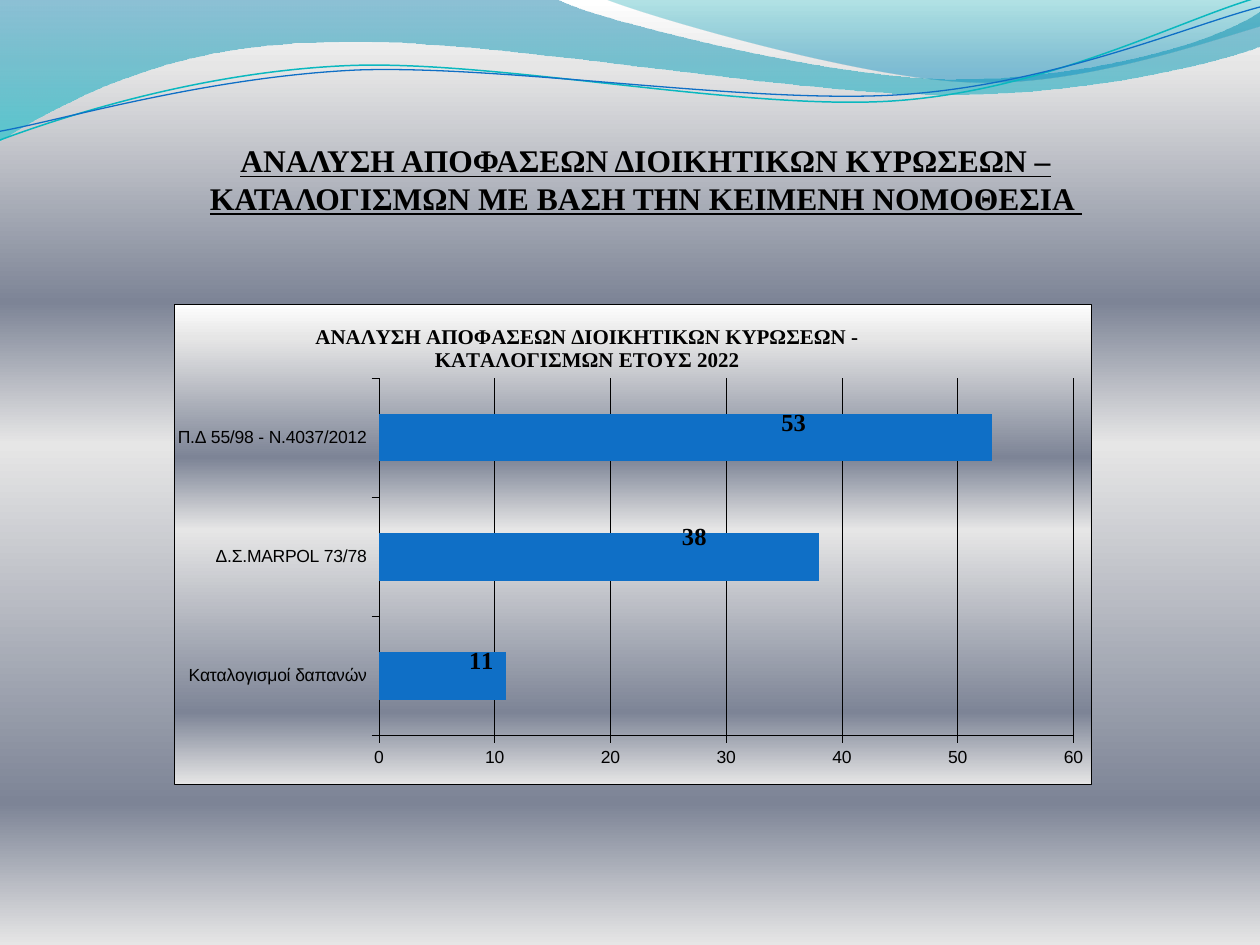
from pptx import Presentation
from pptx.chart.data import CategoryChartData
from pptx.dml.color import RGBColor
from pptx.enum.chart import XL_CHART_TYPE, XL_LABEL_POSITION, XL_TICK_LABEL_POSITION, XL_TICK_MARK
from pptx.enum.text import MSO_ANCHOR, MSO_AUTO_SIZE, PP_ALIGN
from pptx.oxml import parse_xml
from pptx.oxml.ns import nsdecls, qn
from pptx.util import Pt

TITLE = "ΑΝΑΛΥΣΗ ΑΠΟΦΑΣΕΩΝ ΔΙΟΙΚΗΤΙΚΩΝ ΚΥΡΩΣΕΩΝ – ΚΑΤΑΛΟΓΙΣΜΩΝ ΜΕ ΒΑΣΗ ΤΗΝ ΚΕΙΜΕΝΗ ΝΟΜΟΘΕΣΙΑ "
CHART_TITLE = "ΑΝΑΛΥΣΗ ΑΠΟΦΑΣΕΩΝ ΔΙΟΙΚΗΤΙΚΩΝ ΚΥΡΩΣΕΩΝ - ΚΑΤΑΛΟΓΙΣΜΩΝ ΕΤΟΥΣ 2022"
# category, value, shift of its label in points
DECISIONS = [
    ("Καταλογισμοί δαπανών", 11, (-24, -8.5)),
    ("Δ.Σ.MARPOL 73/78", 38, (-81, -11.5)),
    ("Π.Δ 55/98 - N.4037/2012", 53, (-123.5, -8.5)),
]

# Places in points: left, top, width, height; the last two are inside the chart
TITLE_BOX = (65.5, 55.5, 607, 68.5)
CHART_BOX = (99.5, 173.5, 524, 275)
PLOT_BOX = (117, 42.5, 397, 204.5)
CHART_TITLE_PLACE = (78.5, 9.3)

THEME = {
    "black": RGBColor(0, 0, 0), "bar": RGBColor(0x0F, 0x6F, 0xC6),
    "teal": RGBColor(0x0A, 0xB8, 0xBF),
    "serif": "Times New Roman", "sans": "Arial",
    "title": Pt(18), "chart title": Pt(12), "value": Pt(14), "axis": Pt(10),
    "hairline": Pt(0.25),
    # gradient stops: position, colour, opacity (all but colour in percent)
    "silver": [(0, "FFFFFF", 100), (7, "E6E6E6", 100), (32, "7D8496", 100),
               (47, "E6E6E6", 100), (85, "7D8496", 100), (100, "E6E6E6", 100)],
    "left wave": [(0, "0074A1", 45), (100, "00C6CF", 55)],
    "right wave": [(0, "00A1A9", 30), (80, "008BBF", 45)],
}

# Outlines in points: a start, then steps of one point (line) or three (Bézier curve)
FILLED_WAVES = [
    ("left wave", (0, -1), [
        [(317, -1)],
        [(343, 12), (478, 45), (546, 45)], [(614, 45), (690, 27), (720, 6.5)],
        [(721, 26)],
        [(708, 32), (626, 55), (537, 54)], [(447, 54), (275, 20), (185, 24)],
        [(93, 25), (33, 60), (-1, 81)], [(0, -1)]]),
    ("right wave", (345, -1), [
        [(366, 8), (491, 45), (554, 47)], [(616, 50), (692, 23), (720, 15)],
        [(720, 0)], [(345, -1)]]),
]
WAVE_LINES = [
    ("teal", 0.85, (0, 80), [
        [(35, 67), (114, 41), (199, 37.5)], [(284, 34), (427, 64), (513, 57.5)],
        [(600, 51), (675, 11), (719, -1.5)]]),
    ("bar", 0.75, (0, 75), [
        [(34, 69), (118, 44), (204, 40)], [(290, 37), (430, 60), (516, 54)],
        [(602, 48), (678, 15), (720, 4)]]),
]


def apply_gradient(properties, stops):
    """Replace the a:noFill of a properties element by a top-down gradient."""
    stop_xml = "".join(
        f'<a:gs pos="{position * 1000}"><a:srgbClr val="{colour}">'
        f'<a:alpha val="{opacity * 1000}"/></a:srgbClr></a:gs>'
        for position, colour, opacity in stops)
    gradient = parse_xml(
        f'<a:gradFill {nsdecls("a")} rotWithShape="1"><a:gsLst>{stop_xml}</a:gsLst>'
        '<a:lin ang="5400000" scaled="0"/></a:gradFill>')
    properties.replace(properties.find(qn("a:noFill")), gradient)


def add_wave(slide, start, steps, close):
    """Draw lines through every point, then turn each three-point step into a curve."""
    builder = slide.shapes.build_freeform(Pt(start[0]), Pt(start[1]))
    builder.add_line_segments([(Pt(x), Pt(y)) for step in steps for x, y in step], close=close)
    wave = builder.convert_to_shape()
    lines = iter(list(wave._element.iter(qn("a:lnTo"))))
    for step in steps:
        group = [next(lines) for _ in step]
        if len(group) == 3:
            curve = parse_xml(f'<a:cubicBezTo {nsdecls("a")}/>')
            group[0].addprevious(curve)
            for line in group:
                curve.append(line[0])
                line.getparent().remove(line)
    wave.shadow.inherit = False
    wave.fill.background()
    return wave


def style_font(font, face, size, bold=False):
    font.name, font.size, font.bold = THEME[face], THEME[size], bold
    font.color.rgb = THEME["black"]


def style_line(line):
    line.color.rgb = THEME["black"]
    line.width = THEME["hairline"]


def set_layout(parent, before, place, edge=True):
    """Place a chart part by x, y and perhaps inner width and height, all in points."""
    sizes = CHART_BOX[2:] * 2
    parts = [("layoutTarget", "inner")] if len(place) == 4 else []
    if edge:
        parts += [("xMode", "edge"), ("yMode", "edge")]
    parts += [(name, length / size) for name, length, size in zip("xywh", place, sizes)]
    body = "".join(f'<c:{name} val="{value}"/>' for name, value in parts)
    for old in parent.findall(qn("c:layout")):
        parent.remove(old)
    parent.find(qn(before)).addprevious(parse_xml(
        f'<c:layout {nsdecls("c")}><c:manualLayout>{body}</c:manualLayout></c:layout>'))


def add_title(slide):
    title = slide.shapes.title
    title.left, title.top, title.width, title.height = map(Pt, TITLE_BOX)
    frame = title.text_frame
    frame.word_wrap, frame.auto_size = True, MSO_AUTO_SIZE.NONE
    frame.vertical_anchor = MSO_ANCHOR.BOTTOM
    frame.margin_left = frame.margin_right = frame.margin_bottom = 0
    frame.margin_top = Pt(3.6)
    frame.text = TITLE
    paragraph = frame.paragraphs[0]
    paragraph.alignment = PP_ALIGN.CENTER
    style_font(paragraph.font, "serif", "title", bold=True)
    paragraph.font.underline = True


def label_bars(series):
    for index, (_, _, shift) in enumerate(DECISIONS):
        label = series.points[index].data_label
        style_font(label.font, "serif", "value", bold=True)
        label.position = XL_LABEL_POSITION.OUTSIDE_END
        element = series.data_labels._element.findall(qn("c:dLbl"))[index]
        set_layout(element, "c:txPr", shift, edge=False)
    labels = series.data_labels
    labels.show_value = True
    style_font(labels.font, "serif", "value", bold=True)
    for leader in labels._element.findall(qn("c:showLeaderLines")):
        leader.set("val", "0")


def add_decisions_chart(slide):
    data = CategoryChartData()
    data.categories = [category for category, _, _ in DECISIONS]
    data.add_series("Series 1", [value for _, value, _ in DECISIONS])
    chart = slide.shapes.add_chart(XL_CHART_TYPE.BAR_CLUSTERED, *map(Pt, CHART_BOX), data).chart
    chart.has_legend = False
    style_font(chart.font, "sans", "axis")

    title = chart.chart_title
    title.text_frame.text = CHART_TITLE
    style_font(title.text_frame.paragraphs[0].font, "serif", "chart title", bold=True)
    title.include_in_layout = False
    set_layout(title._element, "c:overlay", CHART_TITLE_PLACE)

    for axis in (chart.category_axis, chart.value_axis):
        axis.major_tick_mark = XL_TICK_MARK.OUTSIDE
        style_font(axis.tick_labels.font, "sans", "axis")
        style_line(axis.format.line)
    chart.category_axis.tick_label_position = XL_TICK_LABEL_POSITION.LOW
    values = chart.value_axis
    values.minimum_scale, values.maximum_scale, values.major_unit = 0, 60, 10
    style_line(values.major_gridlines.format.line)

    plot = chart.plots[0]
    plot.gap_width, plot.vary_by_categories = 150, False
    series = plot.series[0]
    series.format.fill.solid()
    series.format.fill.fore_color.rgb = THEME["bar"]
    label_bars(series)

    space = chart._chartSpace
    set_layout(space.chart.plotArea, "c:barChart", PLOT_BOX)
    frame = parse_xml(
        f'<c:spPr {nsdecls("c", "a")}><a:noFill/><a:ln w="{THEME["hairline"]}"><a:solidFill>'
        f'<a:srgbClr val="{THEME["black"]}"/></a:solidFill></a:ln></c:spPr>')
    apply_gradient(frame, THEME["silver"])
    space.chart.addnext(frame)


def main():
    deck = Presentation()
    deck.slide_width, deck.slide_height = Pt(720), Pt(540)
    slide = deck.slides.add_slide(deck.slide_layouts[5])
    slide.background.fill.background()
    apply_gradient(slide._element.cSld.bg.bgPr, THEME["silver"])
    for gradient, start, steps in FILLED_WAVES:
        wave = add_wave(slide, start, steps, close=True)
        wave.line.fill.background()
        apply_gradient(wave._element.spPr, THEME[gradient])
    for colour, width, start, steps in WAVE_LINES:
        wave = add_wave(slide, start, steps, close=False)
        wave.line.color.rgb, wave.line.width = THEME[colour], Pt(width)
    add_title(slide)
    add_decisions_chart(slide)
    deck.save("out.pptx")


if __name__ == "__main__":
    main()
